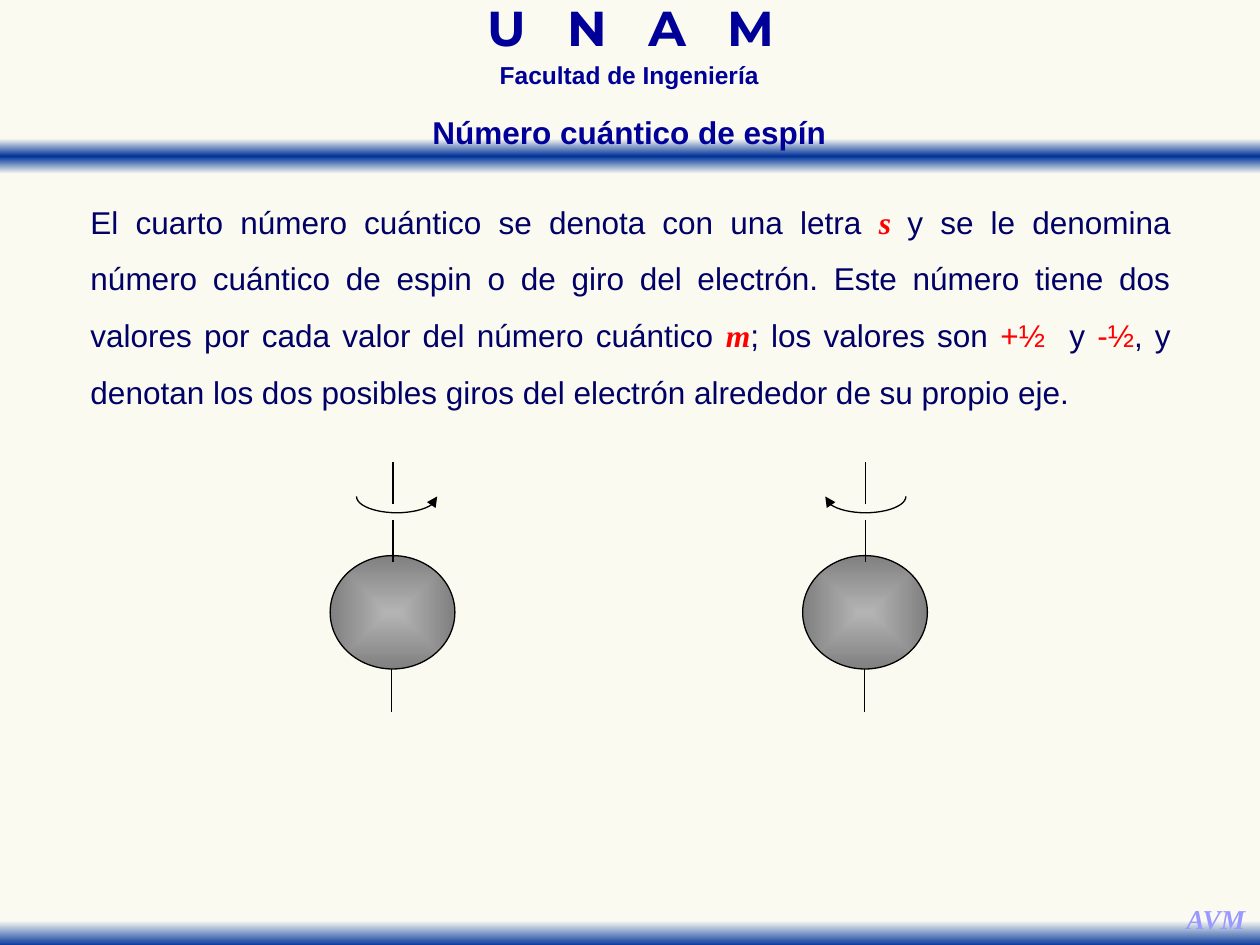
from math import cos, pi, sin
from lxml import etree
from pptx import Presentation
from pptx.dml.color import RGBColor
from pptx.enum import shapes, text
from pptx.oxml import parse_xml
from pptx.oxml.ns import nsdecls, qn
from pptx.util import Inches, Pt

CREAM = RGBColor(0xFA, 0xFA, 0xF0)
BLUE = RGBColor(0x00, 0x00, 0x99)
NAVY = RGBColor(0x00, 0x00, 0x66)
LILAC = RGBColor(0x99, 0x99, 0xFF)
RED = RGBColor(0xFF, 0x00, 0x00)
BLACK = RGBColor(0, 0, 0)

# Content
HEAD = dict(name="Arial", size=Pt(18), bold=True, color=BLUE)
PLAIN = dict(name="Arial", size=Pt(18), color=NAVY)
VALUE = PLAIN | dict(color=RED)
SYMBOL = VALUE | dict(name="Times New Roman", bold=True, italic=True)
TITLE = [("Número cuántico de espín", HEAD)]
LABELS = [
    ((3.05, 0.06, 3.91, 0.43), True,
     [("U   N   A   M", HEAD | dict(name="Montserrat", size=Pt(28)))]),
    ((3.21, 0.49, 3.57, 0.27), True,
     [("Facultad de Ingeniería", HEAD | dict(size=Pt(14)))]),
    ((9.31, 7.18, 0.68, 0.37), False,
     [("AVM", SYMBOL | dict(size=Pt(15.6), color=LILAC))]),
]
BODY = [
    ("El cuarto número cuántico se denota con una letra ", PLAIN),
    ("s ", SYMBOL),
    ("y se le denomina número cuántico de espin o de giro del electrón. "
     "Este número tiene dos valores por cada valor del número cuántico ", PLAIN),
    ("m", SYMBOL),
    ("; los valores son ", PLAIN),
    ("+½  ", VALUE),
    ("y ", PLAIN),
    ("-½", VALUE),
    (", y denotan los dos posibles giros del electrón alrededor de su "
     "propio eje.", PLAIN),
]
BANDS = [  # top, gradient stops
    (1.1, [(0, "FAFAF2"), (50, "003399"), (100, "FAFAF2")]),
    (7.23, [(28, "FAFAF2"), (100, "003399")]),
]
BALL = [(0, "B4B4B4"), (100, "808080")]
DOWN = '<a:lin ang="5400000" scaled="1"/>'
CENTRE = ('<a:path path="shape"><a:fillToRect l="50000" t="50000" '
          'r="50000" b="50000"/></a:path>')
# Axis x, arc centre x, side of the arrowhead
SPINS = [(3.12, 3.15, 1), (6.87, 6.87, -1)]
AXIS = [(-0.01, 5.31, 5.65), (0, 4.46, 4.13), (0, 4, 3.67)]  # dx, from, to


def write(shape, runs, align, gap, wrap=True):
    frame = shape.text_frame
    frame.word_wrap = wrap
    frame.vertical_anchor = text.MSO_ANCHOR.TOP
    para = frame.paragraphs[0]
    para.alignment, para.line_spacing = align, gap
    for words, form in runs:
        run = para.add_run()
        run.text = words
        for key, value in form.items():
            if key == "color":
                run.font.color.rgb = value
            else:
                setattr(run.font, key, value)


def place(box):
    return [Inches(v) for v in box]


def shade(shape, stops, path):
    """Fill a shape with a gradient."""
    marks = "".join(f'<a:gs pos="{pos * 1000}"><a:srgbClr val="{tint}"/></a:gs>'
                    for pos, tint in stops)
    grad = parse_xml(f'<a:gradFill {nsdecls("a")} rotWithShape="1">'
                     f'<a:gsLst>{marks}</a:gsLst>{path}</a:gradFill>')
    shape.shadow.inherit = False
    shape._element.spPr.find(qn("a:prstGeom")).addnext(grad)


def ink(shape):
    shape.line.color.rgb = BLACK
    shape.line.width = Pt(0.75)


def spin(axis, mid, side):
    """Draw an electron, its axis and its turning arrow."""
    ball = draw.add_shape(shapes.MSO_SHAPE.OVAL,
                          *place((axis - 0.5, 4.41, 0.99, 0.9)))
    shade(ball, BALL, CENTRE)
    ink(ball)
    for dx, start, end in AXIS:
        x = Inches(axis + dx)
        line = draw.add_connector(shapes.MSO_CONNECTOR.STRAIGHT,
                                  x, Inches(start), x, Inches(end))
        ink(line)
        etree.SubElement(line._element.spPr, qn("a:effectLst"))
    dots = [(Inches(mid + side * 0.32 * cos(pi * i / 24)),
             Inches(3.94 + 0.13 * sin(pi * i / 24))) for i in range(25)]
    path = draw.build_freeform(*dots[0], scale=1.0)
    path.add_line_segments(dots[1:], close=False)
    arc = path.convert_to_shape()
    arc.shadow.inherit = False
    arc.fill.background()
    ink(arc)
    etree.SubElement(arc.line._get_or_add_ln(), qn("a:headEnd"), type="triangle")


deck = Presentation()
deck.slide_width, deck.slide_height = Inches(10), Inches(7.5)
slide = deck.slides.add_slide(deck.slide_layouts[5])
draw = slide.shapes
slide.background.fill.solid()
slide.background.fill.fore_color.rgb = CREAM

# Bands
for top, stops in BANDS:
    band = draw.add_shape(shapes.MSO_SHAPE.RECTANGLE, *place((0, top, 10, 0.28)))
    shade(band, stops, DOWN)
    band.line.fill.background()

# Header, initials and body
for box, wrap, runs in LABELS:
    write(draw.add_textbox(*place(box)), runs, text.PP_ALIGN.CENTER, 0.7, wrap)
write(draw.add_textbox(*place((0.62, 1.41, 8.77, 1.91))), BODY,
      text.PP_ALIGN.JUSTIFY, 1.5)

# Electrons
for item in SPINS:
    spin(*item)

# Title, in front of the band
title = draw.title
title.left, title.top, title.width, title.height = place((2.83, 0.93, 4.33, 0.32))
write(title, TITLE, text.PP_ALIGN.CENTER, 0.7)
draw._spTree.append(title._element)

deck.save("out.pptx")
